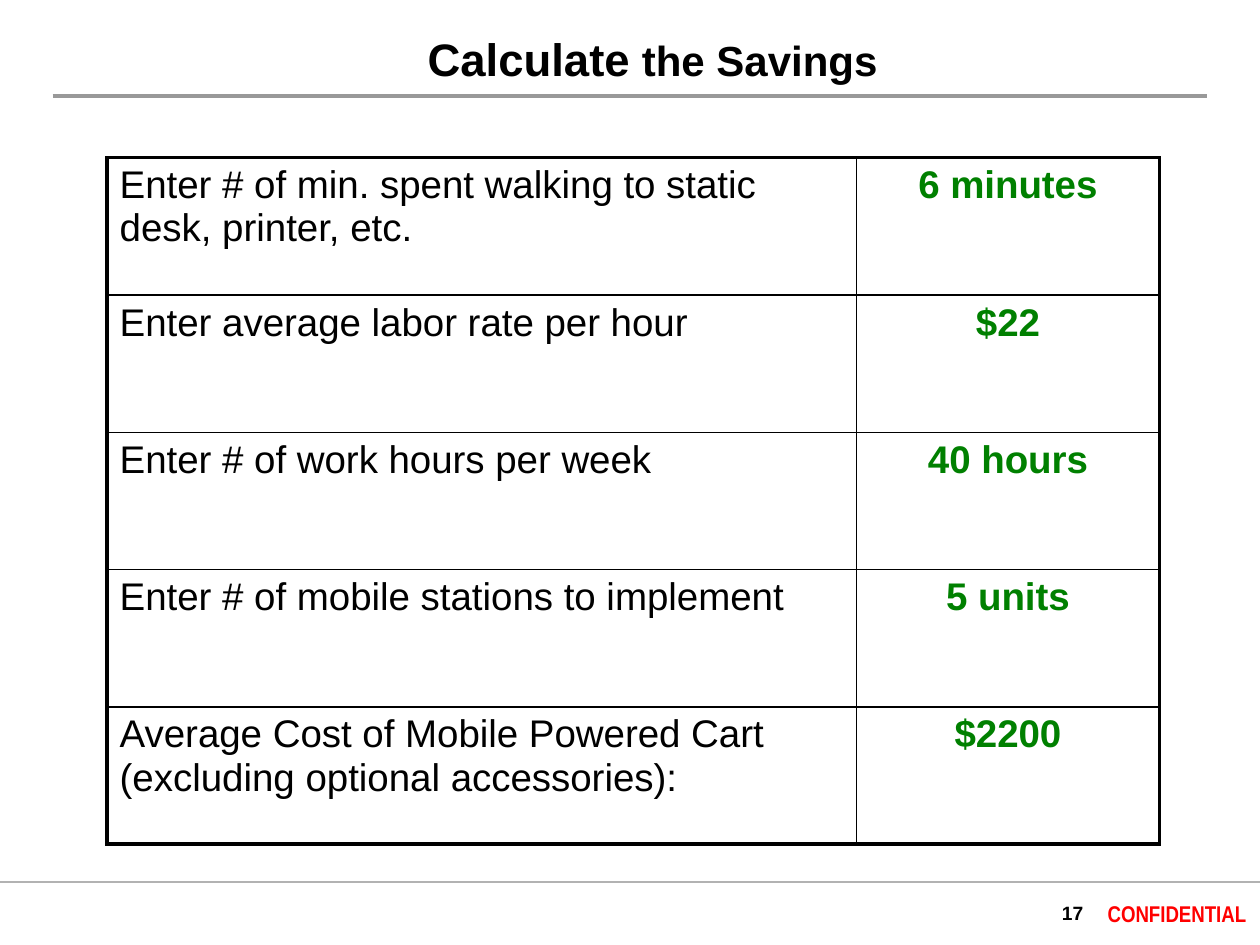
from lxml import etree
from pptx import Presentation
from pptx.dml.color import RGBColor
from pptx.enum.shapes import MSO_CONNECTOR
from pptx.enum.text import MSO_ANCHOR, PP_ALIGN
from pptx.oxml.ns import qn
from pptx.util import Cm, Pt

LEFT, CENTER, RIGHT = PP_ALIGN.LEFT, PP_ALIGN.CENTER, PP_ALIGN.RIGHT
MIDDLE, TOP = MSO_ANCHOR.MIDDLE, MSO_ANCHOR.TOP
STRAIGHT = MSO_CONNECTOR.STRAIGHT

BLACK = RGBColor(0x00, 0x00, 0x00)
GREEN = RGBColor(0x00, 0x80, 0x00)
RED = RGBColor(0xFF, 0x00, 0x00)
TITLE_GRAY = RGBColor(0x99, 0x99, 0x99)
FOOTER_GRAY = RGBColor(0xB2, 0xB2, 0xB2)

PAGE_WIDTH, PAGE_HEIGHT = 25.4, 19.05
THICK, THIN = 2.25, 1
QUESTION_WIDTH = 15.11

INPUTS = [
    ("Enter # of min. spent walking to static desk, printer, etc.", "6 minutes"),
    ("Enter average labor rate per hour", "$22"),
    ("Enter # of work hours per week", "40 hours"),
    ("Enter # of mobile stations to implement", "5 units"),
    ("Average Cost of Mobile Powered Cart (excluding optional accessories):", "$2200"),
]


def add_span(para, text, size=22, color=BLACK, bold=False, font="Arial"):
    span = para.add_run()
    span.text = text
    span.font.name = font
    span.font.size = Pt(size)
    span.font.bold = bold
    span.font.color.rgb = color


def add_text_box(page, left, top, width, height, anchor=TOP, align=LEFT,
                 wrap=True, inset=0):
    """Add an empty text box and return its first paragraph."""
    box = page.shapes.add_textbox(Cm(left), Cm(top), Cm(width), Cm(height))
    frame = box.text_frame
    frame.word_wrap = wrap
    frame.vertical_anchor = anchor
    frame.margin_left = frame.margin_right = Cm(inset)
    frame.margin_top = frame.margin_bottom = Cm(inset / 2)
    para = frame.paragraphs[0]
    para.alignment = align
    return para


def add_rule(page, left, top, width, color, weight):
    rule = page.shapes.add_connector(
        STRAIGHT, Cm(left), Cm(top), Cm(left + width), Cm(top))
    rule.line.color.rgb = color
    rule.line.width = Pt(weight)
    etree.SubElement(rule._element.spPr, qn("a:effectLst"))


def set_borders(cell, weights):
    """Draw black cell borders; weights maps L, R, T, B to points."""
    properties = cell._tc.get_or_add_tcPr()
    for side, weight in weights.items():
        line = etree.SubElement(properties, qn(f"a:ln{side}"), w=str(Pt(weight)))
        fill = etree.SubElement(line, qn("a:solidFill"))
        etree.SubElement(fill, qn("a:srgbClr"), val=str(BLACK))


def add_header(page, left, top, width, height):
    # Title in two sizes above a gray rule
    para = add_text_box(page, left + 7.31, top, 9.68, 1.37, wrap=False, inset=0.25)
    add_span(para, "Calculate", size=26, bold=True)
    add_span(para, " the Savings", size=24, bold=True)
    add_rule(page, left, top + height, width, TITLE_GRAY, 2.25)


def add_input_table(page, left, top, width, height):
    last = len(INPUTS) - 1
    frame = page.shapes.add_table(
        len(INPUTS), 2, Cm(left), Cm(top), Cm(width), Cm(height))
    table = frame.table
    table.first_row = table.horz_banding = False
    table.columns[0].width = Cm(QUESTION_WIDTH)
    table.columns[1].width = Cm(width - QUESTION_WIDTH)

    for row, texts in enumerate(INPUTS):
        table.rows[row].height = Cm(height / len(INPUTS))
        for column, text in enumerate(texts):
            is_value = column == 1
            cell = table.cell(row, column)
            # Thick outer frame, thin inner grid
            set_borders(cell, {
                "L": THIN if is_value else THICK,
                "R": THICK if is_value else THIN,
                "T": THICK if row == 0 else THIN,
                "B": THICK if row == last else THIN,
            })
            cell.fill.background()
            para = cell.text_frame.paragraphs[0]
            para.alignment = CENTER if is_value else LEFT
            add_span(para, text, color=GREEN if is_value else BLACK, bold=is_value)


def add_footer(page, left, top, width):
    add_rule(page, left, top, width, FOOTER_GRAY, 1)
    # Page number
    para = add_text_box(page, left + 20.78, top + 0.2, 1.06, 0.84, MIDDLE, RIGHT)
    add_span(para, "17", size=11, bold=True)
    # Confidentiality mark
    para = add_text_box(page, left + 22.28, top + 0.36, 2.84, 0.56, MIDDLE, RIGHT,
                        wrap=False)
    add_span(para, "CONFIDENTIAL", size=13, color=RED, bold=True, font="Arial Narrow")


def main():
    deck = Presentation()
    deck.slide_width, deck.slide_height = Cm(PAGE_WIDTH), Cm(PAGE_HEIGHT)
    page = deck.slides.add_slide(deck.slide_layouts[6])
    add_footer(page, 0, 17.78, PAGE_WIDTH)
    add_header(page, 1.06, 0.51, 23.28, 1.42)
    add_input_table(page, 2.16, 3.18, 21.21, 13.84)
    deck.save("out.pptx")


if __name__ == "__main__":
    main()
